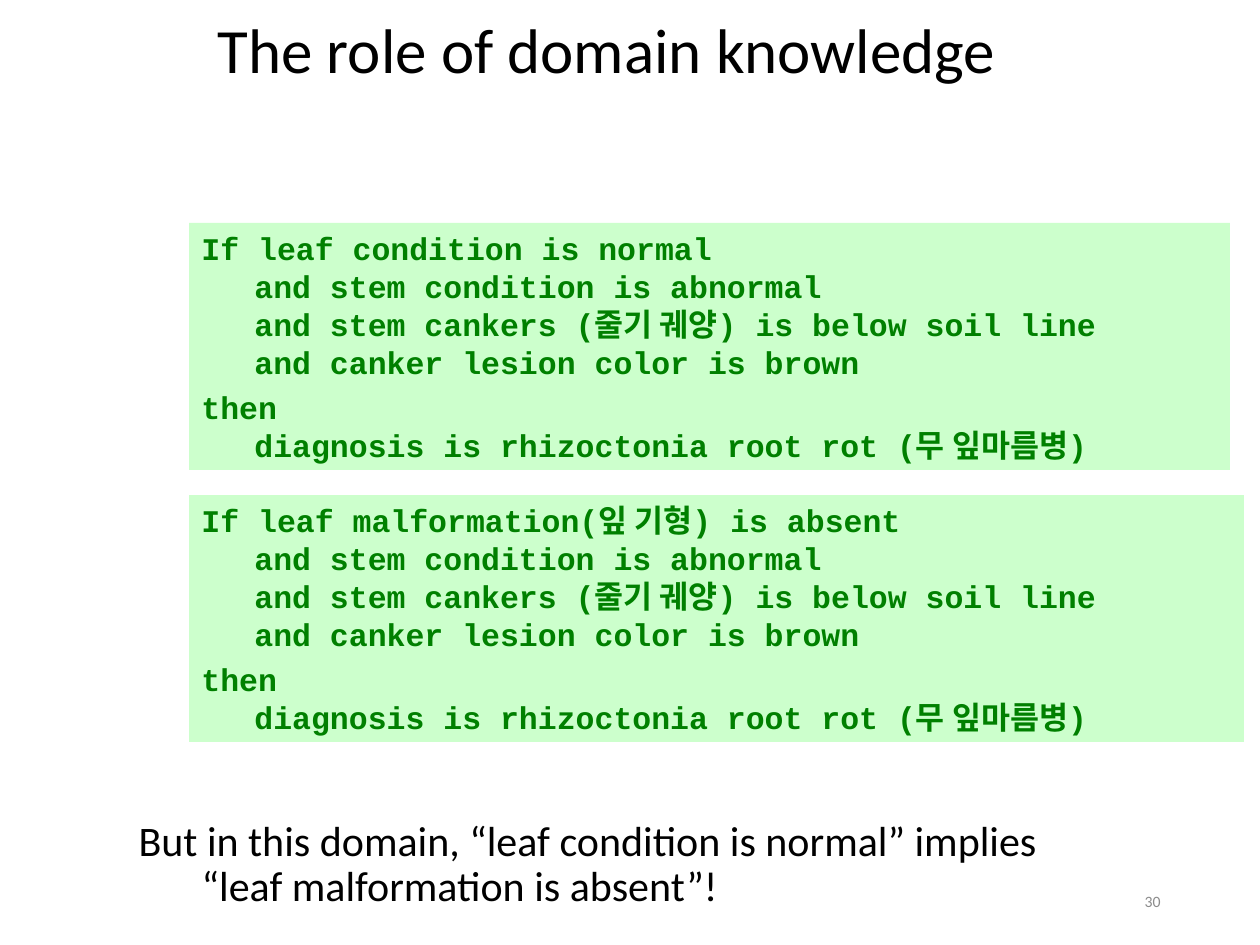
from typing import NamedTuple

from pptx import Presentation
from pptx.dml.color import RGBColor
from pptx.enum.shapes import MSO_SHAPE as Preset
from pptx.enum.text import MSO_ANCHOR as Anchor, MSO_AUTO_SIZE as AutoSize, PP_ALIGN as Align
from pptx.oxml.xmlchemy import OxmlElement
from pptx.util import Emu, Inches, Pt

PX_PER_INCH = 126
BLACK = RGBColor(0x00, 0x00, 0x00)
GREY = RGBColor(0x8C, 0x8C, 0x8C)
GREEN = RGBColor(0x00, 0x80, 0x00)
PALE_GREEN = RGBColor(0xCC, 0xFF, 0xCC)


class Box(NamedTuple):
    left: int
    top: int
    width: int
    height: int


class Style(NamedTuple):
    font: str
    size: int
    color: RGBColor
    bold: bool = False
    align: Align = Align.LEFT
    hanging: int = 0
    line_spacing: float = 1.0
    space_before: float = 0


class Rule(NamedTuple):
    box: Box
    first_condition: str


TITLE = Style("Calibri", 36, BLACK, line_spacing=0.9)
REMARK = Style("Calibri", 24, BLACK, hanging=63, line_spacing=0.9, space_before=6)
CODE = Style("Courier New", 18, GREEN, bold=True, hanging=53, space_before=4.5)
PAGE_NUMBER = Style("Calibri", 9, GREY, align=Align.RIGHT)

SHARED_CONDITIONS = [
    "and stem condition is abnormal",
    "and stem cankers (줄기 궤양) is below soil line",
    "and canker lesion color is brown",
]
CONCLUSION = ["then", "diagnosis is rhizoctonia root rot (무 잎마름병)"]
RULES = [
    Rule(Box(189, 223, 1041, 247), "If leaf condition is normal"),
    Rule(Box(189, 495, 1055, 247), "If leaf malformation(잎 기형) is absent"),
]


def px(length: int) -> Emu:
    return Emu(round(length * Inches(1) / PX_PER_INCH))


def place(shape, box: Box) -> None:
    shape.left, shape.top, shape.width, shape.height = map(px, box)


def write(shape, paragraphs: list[list[str]], style: Style, anchor: Anchor = Anchor.TOP) -> None:
    """Fill the shape; each paragraph is a list of lines joined by line breaks."""
    frame = shape.text_frame
    frame.word_wrap = True
    frame.auto_size = AutoSize.NONE
    frame.vertical_anchor = anchor
    for index, lines in enumerate(paragraphs):
        paragraph = frame.add_paragraph() if index else frame.paragraphs[0]
        paragraph.alignment = style.align
        paragraph.line_spacing = style.line_spacing
        paragraph.space_before = Pt(style.space_before)
        properties = paragraph._p.get_or_add_pPr()
        properties.set("marL", str(px(style.hanging)))
        properties.set("indent", str(-px(style.hanging)))
        properties.append(OxmlElement("a:buNone"))
        for number, line in enumerate(lines):
            if number:
                paragraph.add_line_break()
            run = paragraph.add_run()
            run.text = line
            run.font.name = style.font
            run.font.size = Pt(style.size)
            run.font.bold = style.bold
            run.font.color.rgb = style.color


def draw_rule(slide, rule: Rule) -> None:
    panel = slide.shapes.add_shape(Preset.RECTANGLE, *map(px, rule.box))
    panel.shadow.inherit = False
    panel.fill.solid()
    panel.fill.fore_color.rgb = PALE_GREEN
    panel.line.fill.background()
    write(panel, [[rule.first_condition, *SHARED_CONDITIONS], CONCLUSION], CODE)


def main() -> None:
    deck = Presentation()
    deck.slide_width, deck.slide_height = Inches(10), Inches(7.5)
    slide = deck.slides.add_slide(deck.slide_layouts[1])

    title, remark = slide.placeholders
    place(title, Box(205, -25, 1055, 157))
    write(title, [["The role of domain knowledge"]], TITLE, Anchor.MIDDLE)
    place(remark, Box(126, 814, 1134, 123))
    write(remark, [["But in this domain, “leaf condition is normal” implies",
                    "“leaf malformation is absent”!"]], REMARK)

    for rule in RULES:
        draw_rule(slide, rule)

    page_number = slide.shapes.add_textbox(*map(px, Box(890, 876, 283, 50)))
    write(page_number, [["30"]], PAGE_NUMBER, Anchor.MIDDLE)
    deck.save("out.pptx")


if __name__ == "__main__":
    main()
